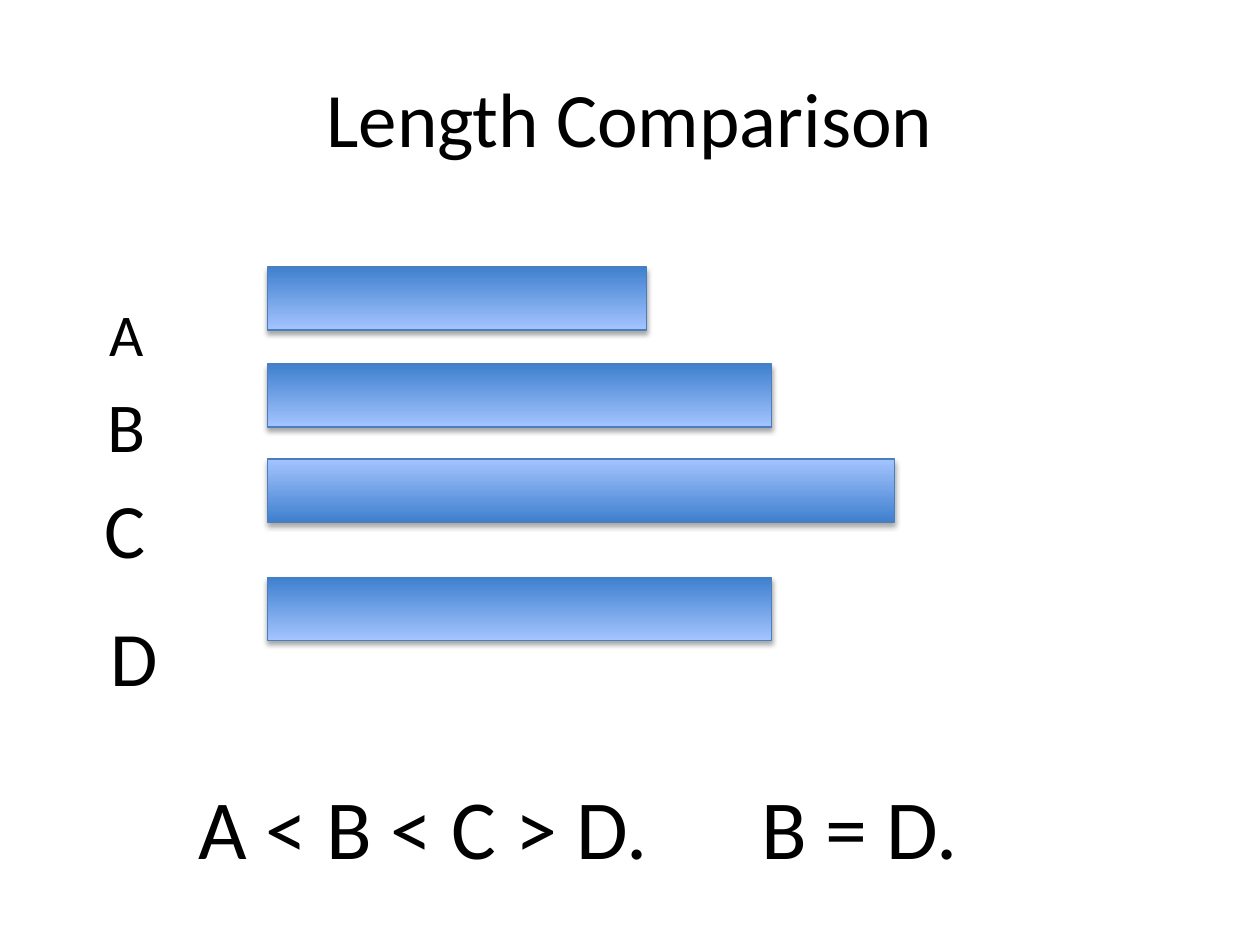
"""Build a slide that compares the lengths of four bars."""
from lxml.etree import SubElement
from pptx import Presentation
from pptx.dml.color import RGBColor
from pptx.enum.shapes import MSO_SHAPE as Shape
from pptx.enum.text import MSO_ANCHOR as Anchor, MSO_AUTO_SIZE as AutoSize, PP_ALIGN as Align
from pptx.oxml.ns import qn
from pptx.util import Pt

COLORS = {"text": "000000", "dark": "3F80CE", "light": "A4C4FF",
          "outline": "4B7EBC", "shadow": "000000"}


def color(name):
    return RGBColor.from_string(COLORS[name])


def style(paragraph, size):
    paragraph.font.name = "Calibri"
    paragraph.font.size = Pt(size)
    paragraph.font.color.rgb = color("text")


deck = Presentation()
deck.slide_width, deck.slide_height = Pt(720), Pt(540)
page = deck.slides.add_slide(deck.slide_layouts[1])

title = page.shapes.title
title.left, title.top, title.width, title.height = Pt(36), Pt(21.6), Pt(648), Pt(90)
title.text_frame.text = "Length Comparison"
title.text_frame.vertical_anchor = Anchor.MIDDLE
title.text_frame.paragraphs[0].alignment = Align.CENTER
style(title.text_frame.paragraphs[0], 44)

body = page.placeholders[1]
body.left, body.top, body.width, body.height = Pt(36), Pt(126), Pt(648), Pt(356.4)
frame = body.text_frame
frame.auto_size = AutoSize.NONE
frame.vertical_anchor = Anchor.TOP
frame.margin_top = Pt(44)

lines = [
    (["A"], 33.8, 19.5, 0),
    (["B"], 40, 18, 8),
    (["C"], 44, 16.5, 8.5),
    (["D"], 44, 20, 20.5),
    (["A < B < C > D.", " ", "B = D."], 48, 70, 42),
]
for number, (parts, size, indent, gap) in enumerate(lines):
    paragraph = frame.add_paragraph() if number else frame.paragraphs[0]
    paragraph.space_before = Pt(gap)
    properties = paragraph._p.get_or_add_pPr()
    properties.set("marL", "0")
    properties.set("indent", str(Pt(indent)))
    SubElement(properties, qn("a:buNone"))
    style(paragraph, size)
    for part in parts:
        span = paragraph.add_run()
        span.text = part
        if part == " ":
            span.font._element.set("spc", "5400")

bars = [
    (152.6, 216.3, 270),
    (208, 287.8, 270),
    (262.3, 358, 90),
    (330, 287.8, 270),
]
for top, width, angle in bars:
    bar = page.shapes.add_shape(Shape.RECTANGLE, Pt(153), Pt(top), Pt(width), Pt(36))
    bar.fill.gradient()
    bar.fill.gradient_angle = angle
    for stop, shade in zip(bar.fill.gradient_stops, ("dark", "light")):
        stop.color.rgb = color(shade)
    bar.line.color.rgb = color("outline")
    bar.line.width = Pt(0.75)
    bar.shadow.inherit = False
    effects = bar._element.spPr.find(qn("a:effectLst"))
    shadow = SubElement(effects, qn("a:outerShdw"), blurRad=str(Pt(3.1)),
                        dist=str(Pt(1.8)), dir="5400000", rotWithShape="0")
    tint = SubElement(shadow, qn("a:srgbClr"), val=COLORS["shadow"])
    SubElement(tint, qn("a:alpha"), val="35000")

deck.save("out.pptx")
